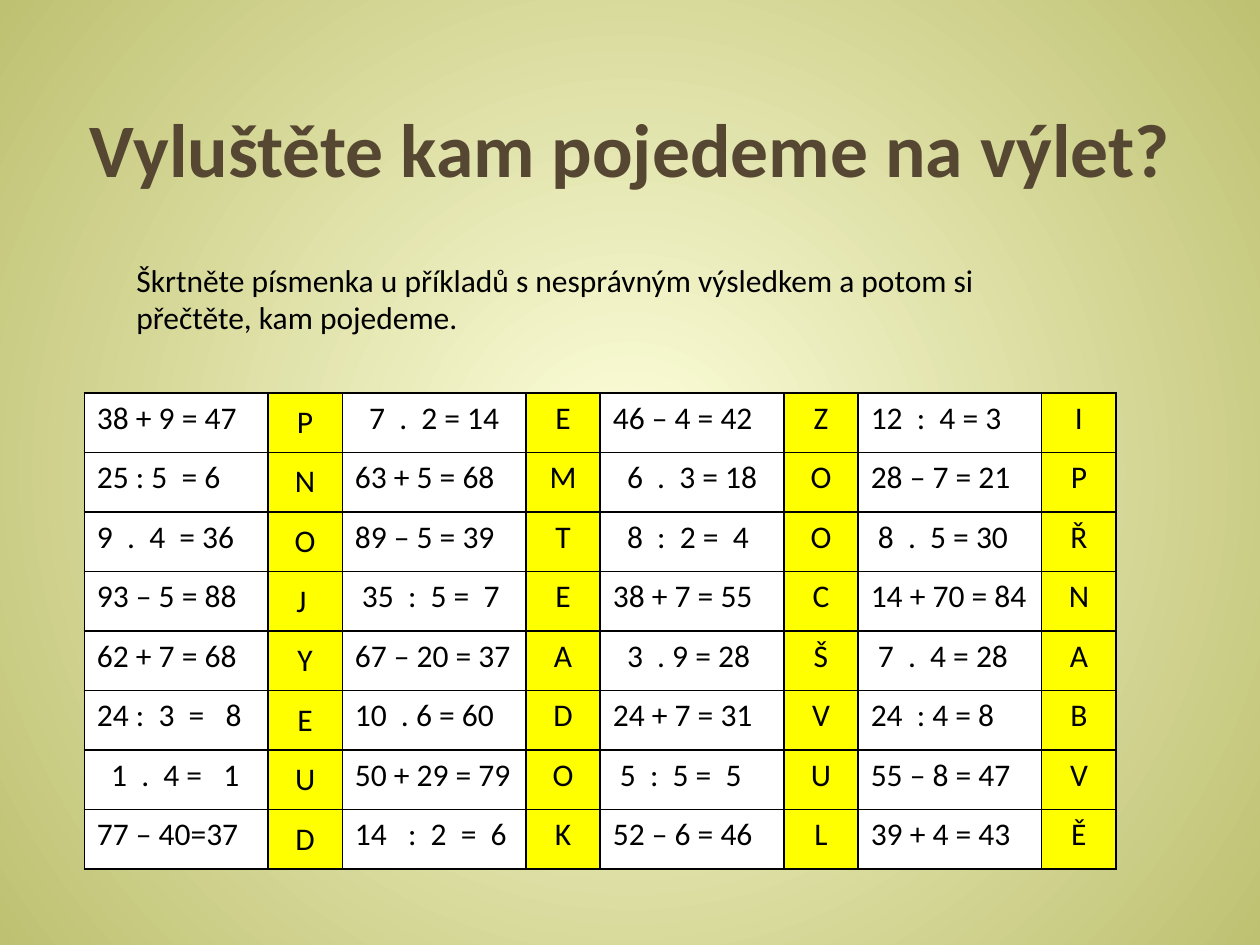
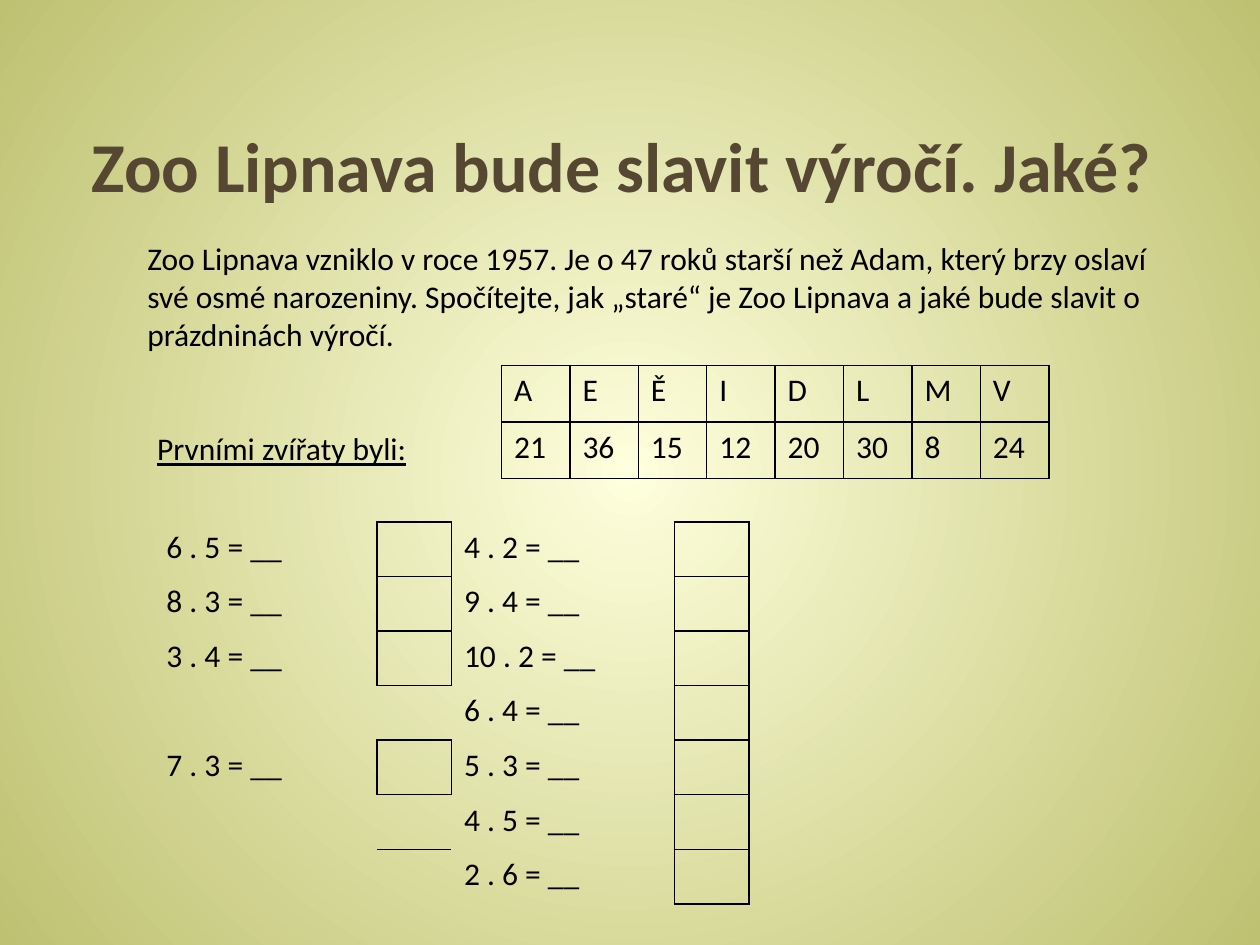
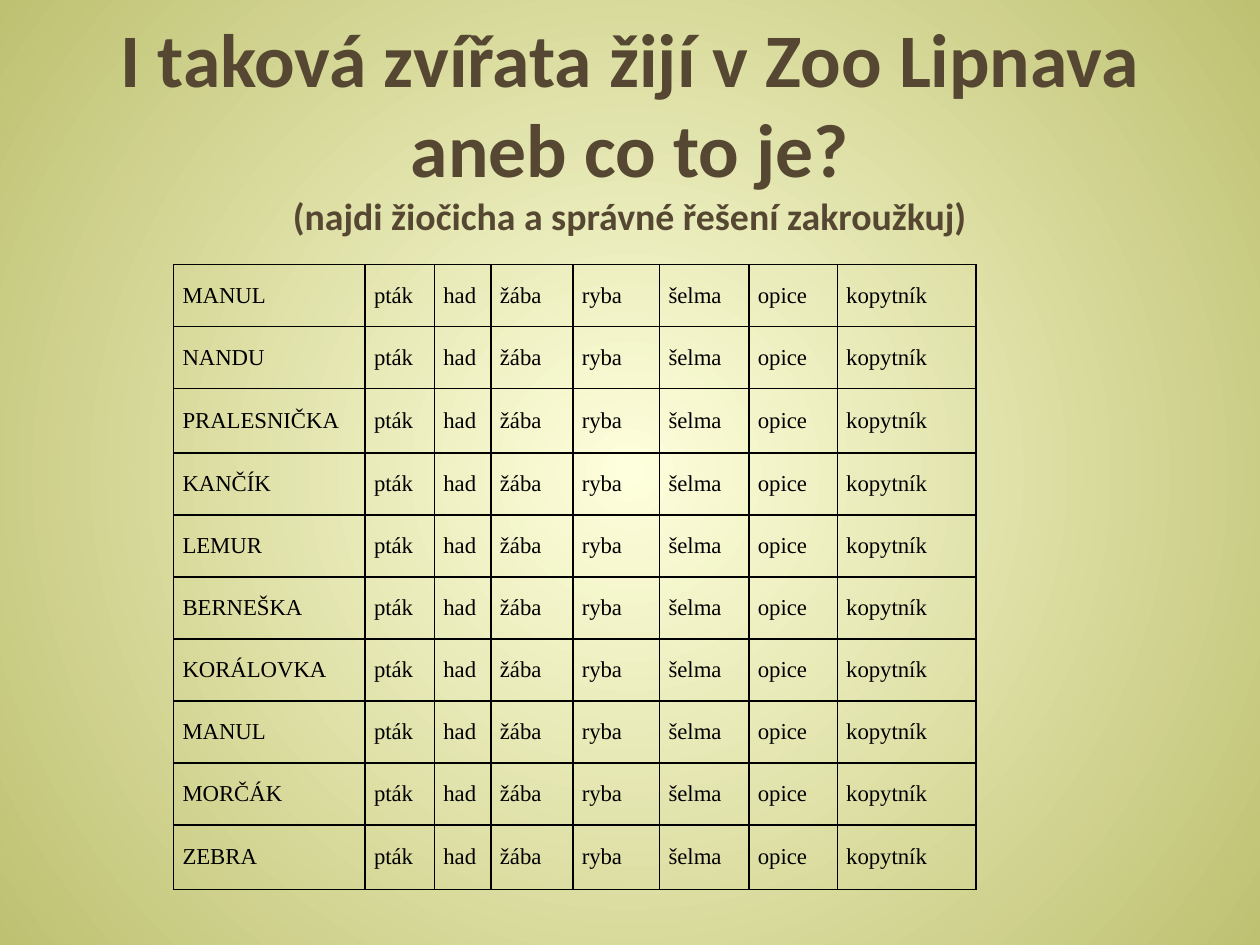
from lxml.etree import SubElement
from pptx import Presentation
from pptx.dml.color import RGBColor
from pptx.enum.text import MSO_ANCHOR, MSO_AUTO_SIZE, PP_ALIGN
from pptx.oxml import parse_xml
from pptx.oxml.ns import nsdecls, qn
from pptx.util import Cm, Pt

# Content
TRIP = "Vyluštěte kam pojedeme na výlet?"
TASK = ("Škrtněte písmenka u příkladů s nesprávným výsledkem a potom si "
        "přečtěte, kam pojedeme.")
SUMS = [
    ("38 + 9 = 47", "P", "  7  .  2 = 14", "E", "46 – 4 = 42", "Z", "12  :  4 = 3", "I"),
    ("25 : 5  = 6", "N", "63 + 5 = 68", "M", "  6  .  3 = 18", "O", "28 – 7 = 21", "P"),
    ("9  .  4  = 36", "O", "89 – 5 = 39", "T", "  8  :  2 =  4", "O", " 8  .  5 = 30", "Ř"),
    ("93 – 5 = 88", "J ", " 35  :  5 =  7", "E", "38 + 7 = 55", "C", "14 + 70 = 84", "N"),
    ("62 + 7 = 68", "Y", "67 – 20 = 37", "A", "  3  . 9 = 28", "Š", " 7  .  4 = 28", "A"),
    ("24 :  3  =   8", "E", "10  . 6 = 60", "D", "24 + 7 = 31", "V", "24  : 4 = 8", "B"),
    ("  1  .  4 =   1", "U", "50 + 29 = 79", "O", " 5  :  5 =  5", "U", "55 – 8 = 47", "V"),
    ("77 – 40=37", "D", "14   :  2  =  6", "K", "52 – 6 = 46", "L", "39 + 4 = 43", "Ě"),
]

JUBILEE = "Zoo Lipnava bude slavit výročí. Jaké?"
STORY = ("Zoo Lipnava vzniklo v roce 1957. Je o 47 roků starší než Adam, který brzy "
         "oslaví své osmé narozeniny. Spočítejte, jak „staré“ je Zoo Lipnava a jaké "
         "bude slavit o prázdninách výročí.")
FIRST = "Prvními zvířaty byli:"
CODE = [("A", "E", "Ě", "I", "D", "L", "M", "V"),
        ("21", "36", "15", "12", "20", "30", "8", "24")]
LEFT = ["6 . 5", "8 . 3", "3 . 4", "", "7 . 3", "", ""]
RIGHT = ["4 . 2", "9 . 4", "10 . 2", "6 . 4", "5 . 3", "4 . 5", "2 . 6"]

ZOO = "I taková zvířata žijí v Zoo Lipnava aneb co to je?"
HINT = "(najdi žiočicha a správné řešení zakroužkuj)"
NAMES = ["MANUL", "NANDU", "PRALESNIČKA", "KANČÍK", "LEMUR", "BERNEŠKA",
         "KORÁLOVKA", "MANUL", "MORČÁK", "ZEBRA"]
KINDS = ["pták", "had", "žába", "ryba", "šelma", "opice", "kopytník"]

# Shared look
BLACK, WHITE, YELLOW, BROWN = "000000", "FFFFFF", "FFFF00", "564732"
GLOW, EDGE = "FEFFDC", "BEC171"
PLAIN = "{2D5ABB26-0587-4C30-8999-92F81FD0307C}"


def color(code):
    return RGBColor.from_string(code)


def text(frame, words, size=18, font="Calibri", ink=BLACK, bold=False,
         under=False, align=PP_ALIGN.LEFT):
    """Add words to the frame, on a new line if it already holds text."""
    para = frame.paragraphs[0]
    if para.runs:
        para.add_line_break()
    para.alignment = align
    run = para.add_run()
    run.text = words
    run.font.size, run.font.name = Pt(size), font
    run.font.bold, run.font.underline = bold, under
    run.font.color.rgb = color(ink)


def paint(master):
    fill = master.background.fill
    fill.gradient()
    for stop, code, pos in zip(fill.gradient_stops, (GLOW, EDGE), (0, 1)):
        stop.color.rgb, stop.position = color(code), pos
    grad = next(master.element.iter(qn("a:gradFill")))
    for line in grad.findall(qn("a:lin")):
        grad.remove(line)
    ring = SubElement(grad, qn("a:path"), {"path": "circle"})
    SubElement(ring, qn("a:fillToRect"), dict.fromkeys("ltrb", "50000"))


def page(deck, words, left, top, high, size):
    slide = deck.slides.add_slide(deck.slide_layouts[5])
    title = slide.shapes.title
    title.left, title.top = Cm(left), Cm(top)
    title.width, title.height = Cm(22.86), Cm(high)
    frame = title.text_frame
    frame.auto_size = MSO_AUTO_SIZE.NONE
    frame.vertical_anchor = MSO_ANCHOR.BOTTOM
    text(frame, words, size=size, ink=BROWN, bold=True, align=PP_ALIGN.CENTER)
    return slide


def note(slide, words, left, top, wide, high, **style):
    frame = slide.shapes.add_textbox(Cm(left), Cm(top), Cm(wide), Cm(high)).text_frame
    frame.word_wrap = True
    text(frame, words, **style)


def rule(cell, sides):
    """Draw thin black lines on the given sides of a cell."""
    props = cell._tc.get_or_add_tcPr()
    for spot, side in enumerate(s for s in "LRTB" if s in sides):
        props.insert(spot, parse_xml(
            f'<a:ln{side} {nsdecls("a")} w="12700"><a:solidFill>'
            f'<a:srgbClr val="{BLACK}"/></a:solidFill></a:ln{side}>'))


def grid(slide, rows, left, top, wide, high, sides=lambda r, c: "LRTB",
         look=lambda c: {}, fills=None, anchor=lambda c: MSO_ANCHOR.TOP, inset=None):
    """Place a table; wide and high list the column and row sizes in cm."""
    shape = slide.shapes.add_table(len(rows), len(wide), Cm(left), Cm(top),
                                   Cm(sum(wide)), Cm(sum(high)))
    next(shape.element.iter(qn("a:tableStyleId"))).text = PLAIN
    table = shape.table
    table.first_row = table.horz_banding = False
    for col, size in zip(table.columns, wide):
        col.width = Cm(size)
    for row, size in zip(table.rows, high):
        row.height = Cm(size)
    for r, row in enumerate(rows):
        for c, words in enumerate(row):
            cell = table.cell(r, c)
            cell.vertical_anchor = anchor(c)
            if inset is not None:
                cell.margin_left = cell.margin_right = Cm(inset)
                cell.margin_top = cell.margin_bottom = 0
            if fills:
                cell.fill.solid()
                cell.fill.fore_color.rgb = color(fills[c % len(fills)])
            else:
                cell.fill.background()
            if words:
                text(cell.text_frame, words, **look(c))
            rule(cell, sides(r, c))


def trip(deck):
    slide = page(deck, TRIP, 1.27, 0.84, 3.18, 43.2)
    note(slide, TASK, 2.5, 5.13, 19.6, 1.8)
    grid(slide, SUMS, 1.7, 7.92, [3.7, 1.5] * 4, [1.2] * len(SUMS),
         look=lambda c: {"align": PP_ALIGN.CENTER if c % 2 else PP_ALIGN.LEFT},
         fills=(WHITE, YELLOW),
         anchor=lambda c: MSO_ANCHOR.MIDDLE if c == 1 else MSO_ANCHOR.TOP)


def jubilee(deck):
    slide = page(deck, JUBILEE, 1.1, 1.12, 3.18, 40)
    note(slide, STORY, 2.72, 4.7, 20.8, 2.56)
    note(slide, FIRST, 2.92, 8.53, 6.15, 1.02, under=True)

    # Answer boxes stand to the right of each sum
    sums = [[f"{s} = __" if s else "" for s in pair] for pair in zip(LEFT, RIGHT)]
    rows = [(a, "", b, "") for a, b in sums]

    def boxed(r, c):
        return 0 <= r < len(rows) and c in (1, 3) and bool(rows[r][c - 1])

    def sides(r, c):
        near = {"L": (r, c - 1), "R": (r, c + 1), "T": (r - 1, c), "B": (r + 1, c)}
        lines = {s for s, spot in near.items() if boxed(r, c) or boxed(*spot)}
        if (r, c) == (5, 1):
            lines.add("B")
        return lines

    grid(slide, rows, 3.1, 10.52, [4.5, 1.5] * 2, [1.1] * len(rows), sides=sides)
    grid(slide, CODE, 10.11, 7.37, [1.38] * 8, [1.14] * 2)


def animals(deck):
    slide = page(deck, ZOO, 1.27, 0.84, 4.09, 43.2)
    text(slide.shapes.title.text_frame, HINT, size=21.6, ink=BROWN, bold=True,
         align=PP_ALIGN.CENTER)
    rows = [[name, *KINDS] for name in NAMES]
    high = [1.3 if r in (2, 9) else 1.25 for r in range(len(rows))]
    grid(slide, rows, 3.5, 5.33, [3.86, 1.4, 1.14, 1.65, 1.75, 1.8, 1.78, 2.8], high,
         look=lambda c: {"size": 13, "font": "Times New Roman"},
         anchor=lambda c: MSO_ANCHOR.MIDDLE, inset=0.18)


def main():
    deck = Presentation()
    deck.slide_width, deck.slide_height = Cm(25.4), Cm(19.05)
    paint(deck.slide_master)
    for build in (trip, jubilee, animals):
        build(deck)
    deck.save("out.pptx")


if __name__ == "__main__":
    main()
